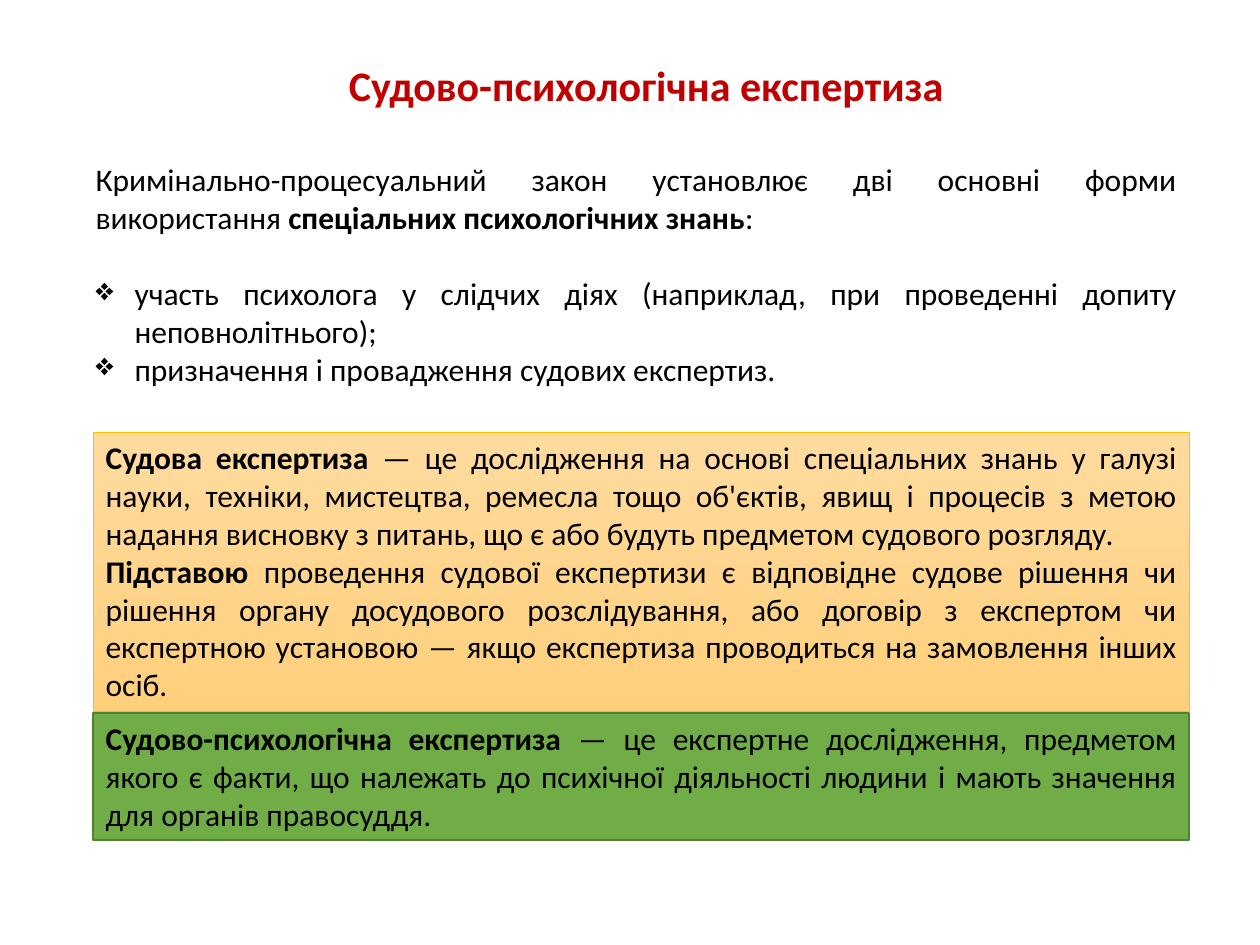
from lxml import etree
from pptx import Presentation
from pptx import util as u
from pptx.dml.color import RGBColor
from pptx.enum import shapes, text
from pptx.oxml.ns import qn

RED = RGBColor(0xC0, 0x00, 0x00)
BLACK = RGBColor(0x00, 0x00, 0x00)
GREEN = RGBColor(0x70, 0xAD, 0x47)
DARK_GREEN = RGBColor(0x53, 0x80, 0x35)
GOLD = RGBColor(0xFF, 0xC0, 0x00)
PALE_ORANGE = RGBColor(0xFF, 0xDB, 0x9E)
ORANGE = RGBColor(0xFF, 0xD0, 0x7C)


def write(frame, paragraphs, size=18, color=BLACK, align=text.PP_ALIGN.JUSTIFY):
    """Fill a frame with paragraphs, each a list of (wording, bold) runs."""
    frame.word_wrap = True
    for i, runs in enumerate(paragraphs):
        paragraph = frame.paragraphs[0] if i == 0 else frame.add_paragraph()
        paragraph.alignment = align
        for wording, bold in runs:
            run = paragraph.add_run()
            run.text = wording
            run.font.name = "Calibri"
            run.font.size = u.Pt(size)
            run.font.bold = bold
            run.font.color.rgb = color


def add_panel(top, height, line_color, line_width, paragraphs):
    panel = slide.shapes.add_shape(
        shapes.MSO_SHAPE.RECTANGLE,
        u.Inches(0.74), u.Inches(top), u.Inches(8.7), u.Inches(height))
    panel.shadow.inherit = False
    panel.line.color.rgb = line_color
    panel.line.width = u.Pt(line_width)
    panel.text_frame.vertical_anchor = text.MSO_ANCHOR.TOP
    write(panel.text_frame, paragraphs)
    return panel


prs = Presentation()
prs.slide_width, prs.slide_height = u.Inches(10), u.Inches(7.5)
slide = prs.slides.add_slide(prs.slide_layouts[6])

# Heading
heading = slide.shapes.add_textbox(
    u.Inches(2.67), u.Inches(0.42), u.Inches(5), u.Inches(0.5))
write(heading.text_frame, [[("Судово-психологічна експертиза", True)]],
      size=24, color=RED, align=text.PP_ALIGN.LEFT)

# Introduction and the two forms
forms = slide.shapes.add_textbox(
    u.Inches(0.66), u.Inches(1.22), u.Inches(8.78), u.Inches(1.92))
write(forms.text_frame, [
    [("Кримінально-процесуальний закон установлює дві основні форми використання ", False),
     ("спеціальних психологічних знань", True),
     (": ", False)],
    [("участь психолога у слідчих діях (наприклад, при проведенні допиту неповнолітнього); ", False)],
    [("призначення і провадження судових експертиз.", False)],
])
intro, *form_items = forms.text_frame.paragraphs
intro.space_after = u.Pt(22)
for item in form_items:
    props = item._p.get_or_add_pPr()
    props.set("marL", str(u.Inches(0.31)))
    props.set("indent", str(-u.Inches(0.31)))
    etree.SubElement(props, qn("a:buChar")).set("char", "❖")

# Definition of forensic psychological examination
psychological = add_panel(5.66, 1.01, DARK_GREEN, 1, [
    [("Судово-психологічна експертиза ", True),
     ("— це експертне дослідження, предметом якого є факти, що належать до психічної "
      "діяльності людини і мають значення для органів правосуддя.", False)],
])
psychological.fill.solid()
psychological.fill.fore_color.rgb = GREEN

# Definition of forensic examination and its grounds
forensic = add_panel(3.43, 2.22, GOLD, 0.5, [
    [("Судова експертиза ", True),
     ("— це дослідження на основі спеціальних знань у галузі науки, техніки, мистецтва, "
      "ремесла тощо об'єктів, явищ і процесів з метою надання висновку з питань, що є або "
      "будуть предметом судового розгляду.", False)],
    [("Підставою ", True),
     ("проведення судової експертизи є відповідне судове рішення чи рішення органу "
      "досудового розслідування, або договір з експертом чи експертною установою — якщо "
      "експертиза проводиться на замовлення інших осіб.", False)],
])
forensic.fill.gradient()
forensic.fill.gradient_angle = 270
for stop, color in zip(forensic.fill.gradient_stops, (PALE_ORANGE, ORANGE)):
    stop.color.rgb = color

prs.save("out.pptx")
